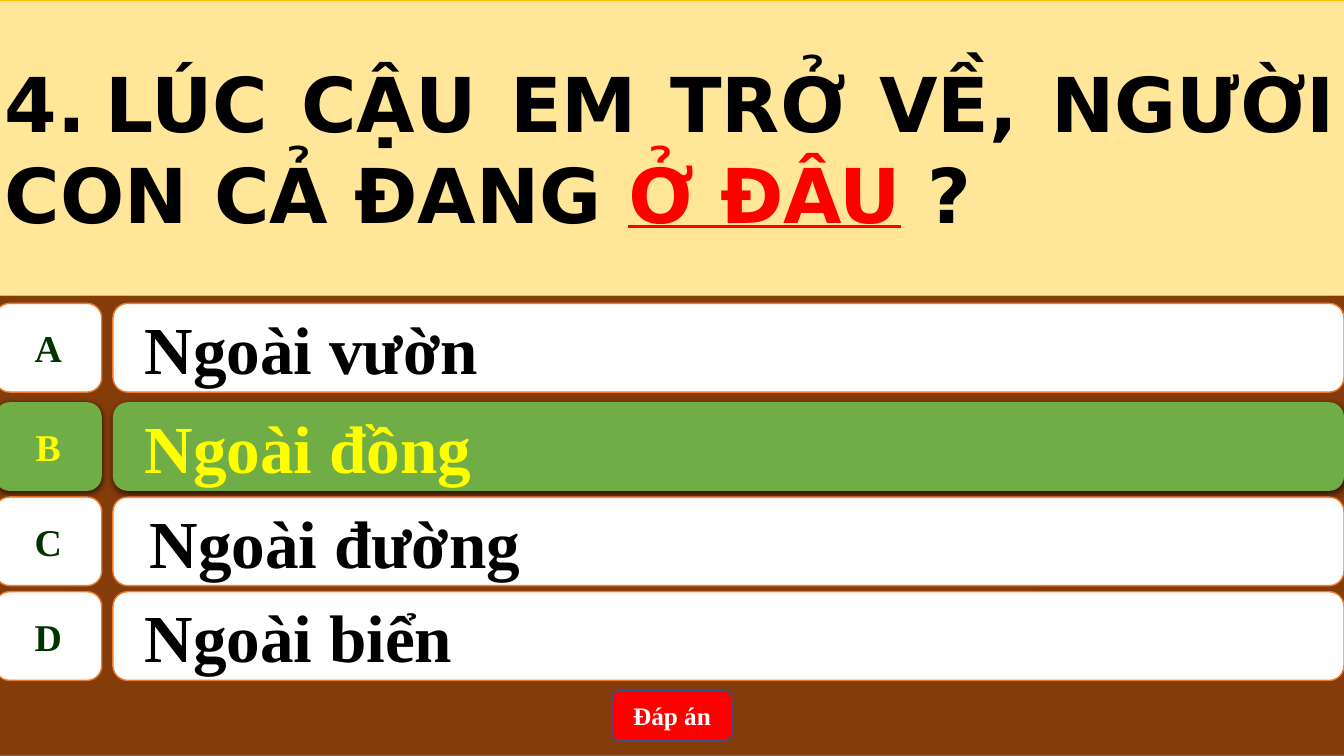
"""Build a quiz slide with one question, four answers and the right one lit up."""

from dataclasses import dataclass

import lxml.etree
import pptx
import pptx.dml.color
import pptx.enum.shapes
import pptx.enum.text
import pptx.oxml.ns
import pptx.shapes.autoshape
import pptx.slide
import pptx.util

Inches = pptx.util.Inches
Shapes = pptx.enum.shapes.MSO_SHAPE
Align = pptx.enum.text.PP_ALIGN

COLORS = {
    "board": "843C0B", "board_edge": "43739E", "question": "FFE699",
    "question_edge": "FFC000", "black": "000000", "red": "FF0000",
    "white": "FFFFFF", "orange": "ED7D31", "letter": "003300",
    "green": "70AD47", "yellow": "FFFF00", "button_edge": "325491",
}
SERIF = "Times New Roman"
LEFT = -0.05
FULL_WIDTH = 13.39
ROW_HEIGHT = 0.88
FIRST_TOP = 3.01
SECOND_TOP = 3.99
ROW_STEP = 0.94


@dataclass
class Answer:
    letter: str
    text: str
    top: float
    inset: float = 0.27
    correct: bool = False


ANSWERS = [
    Answer("A", "Ngoài vườn", FIRST_TOP),
    Answer("C", "Ngoài đường", SECOND_TOP + ROW_STEP, inset=0.32),
    Answer("D", "Ngoài biển", SECOND_TOP + 2 * ROW_STEP),
    Answer("B", "Ngoài đồng", SECOND_TOP, correct=True),
]
QUESTION = [
    ("4.\tLÚC CẬU EM TRỞ VỀ, NGƯỜI CON CẢ ĐANG ", "black", False),
    ("Ở ĐÂU", "red", True),
    (" ?", "black", False),
]


def rgb(name: str) -> pptx.dml.color.RGBColor:
    return pptx.dml.color.RGBColor.from_string(COLORS[name])


def add_box(slide: pptx.slide.Slide, kind: Shapes, left: float, top: float,
            width: float, height: float, fill: str, edge: str | None,
            edge_width: float = 1) -> pptx.shapes.autoshape.Shape:
    shape = slide.shapes.add_shape(
        kind, Inches(left), Inches(top), Inches(width), Inches(height))
    shape.shadow.inherit = False
    shape.fill.solid()
    shape.fill.fore_color.rgb = rgb(fill)
    if edge:
        shape.line.color.rgb = rgb(edge)
        shape.line.width = pptx.util.Pt(edge_width)
    else:
        shape.line.fill.background()
    shape.text_frame.word_wrap = True
    shape.text_frame.vertical_anchor = pptx.enum.text.MSO_ANCHOR.MIDDLE
    return shape


def write(shape: pptx.shapes.autoshape.Shape, text: str, size: float,
          color: str, align: Align = Align.CENTER) -> None:
    paragraph = shape.text_frame.paragraphs[0]
    paragraph.text = text
    paragraph.alignment = align
    paragraph.font.name = SERIF
    paragraph.font.size = pptx.util.Pt(size)
    paragraph.font.bold = True
    paragraph.font.color.rgb = rgb(color)


def add_shadow(shape: pptx.shapes.autoshape.Shape) -> None:
    qn = pptx.oxml.ns.qn
    effects = shape._element.spPr.find(qn("a:effectLst"))
    shadow = lxml.etree.SubElement(
        effects, qn("a:outerShdw"), blurRad=str(pptx.util.Pt(4.5)),
        dist=str(pptx.util.Pt(1.5)), dir="5400000", algn="ctr", rotWithShape="0")
    color = lxml.etree.SubElement(shadow, qn("a:srgbClr"), val=COLORS["black"])
    lxml.etree.SubElement(color, qn("a:alpha"), val="63000")


def add_answer(slide: pptx.slide.Slide, answer: Answer) -> None:
    fill, edge = ("green", None) if answer.correct else ("white", "orange")
    bar = add_box(slide, Shapes.ROUNDED_RECTANGLE, 1.12, answer.top,
                  12.21, ROW_HEIGHT, fill, edge)
    bar.text_frame.margin_left = Inches(answer.inset)
    write(bar, answer.text, 48, "yellow" if answer.correct else "black", Align.LEFT)
    tab = add_box(slide, Shapes.FLOWCHART_ALTERNATE_PROCESS, LEFT, answer.top,
                  1.06, ROW_HEIGHT, fill, edge)
    tab.text_frame.word_wrap = False
    write(tab, answer.letter, 27, "yellow" if answer.correct else "letter")
    if answer.correct:
        add_shadow(bar)
        add_shadow(tab)


def add_question(slide: pptx.slide.Slide) -> None:
    panel = add_box(slide, Shapes.RECTANGLE, LEFT, 0, FULL_WIDTH, 2.93,
                    "question", "question_edge", 0.5)
    paragraph = panel.text_frame.paragraphs[0]
    paragraph.alignment = Align.JUSTIFY
    paragraph.font.name = "DejaVu Sans"
    paragraph.font.size = pptx.util.Pt(54)
    paragraph.font.bold = True
    for text, color, underlined in QUESTION:
        run = paragraph.add_run()
        run.text = text
        run.font.color.rgb = rgb(color)
        run.font.underline = underlined


def main() -> None:
    presentation = pptx.Presentation()
    presentation.slide_width = Inches(13.33)
    presentation.slide_height = Inches(7.5)
    slide = presentation.slides.add_slide(presentation.slide_layouts[6])
    add_box(slide, Shapes.RECTANGLE, LEFT, 0, FULL_WIDTH, 7.5, "board", "board_edge")
    add_question(slide)
    for answer in ANSWERS:
        add_answer(slide, answer)
    button = add_box(slide, Shapes.ROUNDED_RECTANGLE, 6.07, 6.85, 1.19, 0.5,
                     "red", "button_edge")
    write(button, "Đáp án", 18, "white")
    presentation.save("out.pptx")


if __name__ == "__main__":
    main()
